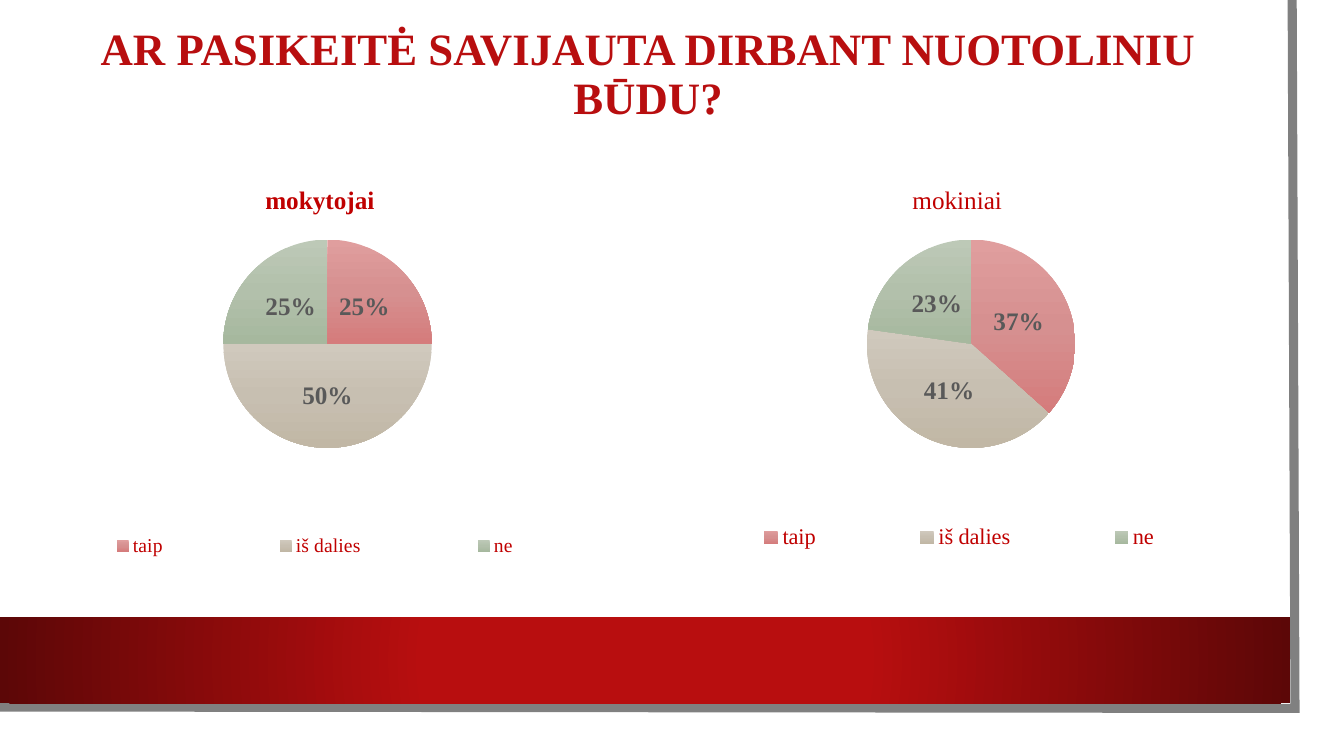
"""Build the slide comparing how teachers and pupils feel about remote work."""
from lxml import etree
from pptx import Presentation
from pptx.chart.data import CategoryChartData
from pptx.dml.color import RGBColor
from pptx.enum.chart import XL_CHART_TYPE, XL_LABEL_POSITION, XL_LEGEND_POSITION
from pptx.enum.shapes import MSO_SHAPE
from pptx.enum.text import MSO_ANCHOR, PP_ALIGN
from pptx.oxml.ns import qn
from pptx.util import Pt

PIE = XL_CHART_TYPE.PIE
LABEL_CENTER = XL_LABEL_POSITION.CENTER
LEGEND_BOTTOM = XL_LEGEND_POSITION.BOTTOM
RECTANGLE = MSO_SHAPE.RECTANGLE
MIDDLE = MSO_ANCHOR.MIDDLE
CENTER = PP_ALIGN.CENTER

SERIF = "Times New Roman"
RED = "B80E0F"
CHART_RED = "C00000"
ANSWERS = ["taip", "iš dalies", "ne"]
SLICE_COLORS = [
    ("E09E9E", "D69090", "D57C7C"),
    ("D0C9BD", "C7BFB1", "C1B7A5"),
    ("BDC9B7", "B2C0AB", "A6B89E"),
]


def color(code):
    """Turn a hex string into a colour."""
    return RGBColor.from_string(code)


def set_font(font, size, code, bold=False, name=SERIF):
    """Format a font."""
    font.name = name
    font.size = Pt(size)
    font.bold = bold
    font.color.rgb = color(code)


def add_text(frame, text, size, code, bold=False, align=CENTER, spacing=None):
    """Write one formatted paragraph into a text frame."""
    para = frame.paragraphs[0]
    para.alignment = align
    if spacing:
        para.line_spacing = spacing
    span = para.add_run()
    span.text = text
    set_font(span.font, size, code, bold)


def set_gradient(fill, properties, stops, radial=False):
    """Give shape properties a vertical or radial gradient."""
    fill.background()
    gradient = etree.Element(qn("a:gradFill"), rotWithShape="1")
    stop_list = etree.SubElement(gradient, qn("a:gsLst"))
    for position, code in stops:
        stop = etree.SubElement(stop_list, qn("a:gs"), pos=str(position * 1000))
        etree.SubElement(stop, qn("a:srgbClr"), val=code)
    if radial:
        shade = etree.SubElement(gradient, qn("a:path"), path="circle")
        etree.SubElement(shade, qn("a:fillToRect"), l="50000", t="50000", r="50000", b="50000")
    else:
        etree.SubElement(gradient, qn("a:lin"), ang="5400000", scaled="0")
    properties.replace(properties.find(qn("a:noFill")), gradient)


def set_layout(part, inner=False, **sizes):
    """Place a chart part by fractions of the chart area."""
    for old in part.findall(qn("c:layout")):
        part.remove(old)
    layout = etree.Element(qn("c:layout"))
    manual = etree.SubElement(layout, qn("c:manualLayout"))
    if inner:
        etree.SubElement(manual, qn("c:layoutTarget"), val="inner")
    for axis in ("x", "y"):
        etree.SubElement(manual, qn(f"c:{axis}Mode"), val="edge")
    for key, value in sizes.items():
        etree.SubElement(manual, qn(f"c:{key}"), val=str(value))
    overlay = part.find(qn("c:overlay"))
    part.insert(0 if overlay is None else part.index(overlay), layout)


def add_frame(page, left, top, width, height):
    """Draw the grey edge on the right and bottom and the red band above it."""
    right, bottom = left + width, top + height
    builder = page.shapes.build_freeform(right - 2, top, scale=Pt(1))
    builder.add_line_segments([(right, bottom), (left - 2, bottom - 1)], close=False)
    edge = builder.convert_to_shape()
    edge.shadow.inherit = False
    edge.fill.background()
    edge.line.width = Pt(6.5)
    edge.line.color.rgb = color("808080")
    outline = edge._element.spPr.find(qn("a:ln"))
    etree.SubElement(outline, qn("a:miter"), lim="800000")

    band = page.shapes.add_shape(
        RECTANGLE, Pt(left), Pt(bottom - 64.8), Pt(width - 3.6), Pt(61.2))
    band.shadow.inherit = False
    band.line.fill.background()
    set_gradient(band.fill, band._element.spPr, [(34, RED), (100, "5C0707")], radial=True)


def add_title(page, left, top, width, height):
    """Add the centred question at the top."""
    box = page.shapes.add_textbox(Pt(left), Pt(top), Pt(width), Pt(height))
    frame = box.text_frame
    frame.word_wrap = True
    frame.vertical_anchor = MIDDLE
    add_text(frame, "AR PASIKEITĖ SAVIJAUTA DIRBANT NUOTOLINIU BŪDU?", 32, RED,
             bold=True, spacing=0.9)


def add_pie(page, left, top, width, height, title, values,
            title_bold, legend_size, legend_top):
    """Add one pie of answers with its title and legend."""
    data = CategoryChartData()
    data.categories = ANSWERS
    data.add_series("Series 1", values)
    chart = page.shapes.add_chart(
        PIE, Pt(left), Pt(top), Pt(width), Pt(height), data).chart
    set_font(chart.font, 10, "000000", name="Arial Narrow")

    chart.has_title = True
    add_text(chart.chart_title.text_frame, title, 18, CHART_RED, title_bold)
    set_layout(chart.chart_title._element, x=0.41, y=0.03)

    chart.has_legend = True
    legend = chart.legend
    legend.position = LEGEND_BOTTOM
    legend.include_in_layout = True
    set_font(legend.font, legend_size, CHART_RED)
    set_layout(legend._element, x=0.01, y=legend_top, w=0.97, h=0.12)

    plot = chart.plots[0]
    plot.vary_by_categories = True
    set_layout(plot._element.getparent(), inner=True, x=0.03, y=0.17, w=0.97, h=0.49)
    plot.has_data_labels = True
    labels = plot.data_labels
    labels.show_percentage = True
    labels.show_value = False
    labels.number_format = "0%"
    labels.number_format_is_linked = False
    labels.position = LABEL_CENTER
    set_font(labels.font, 18, "595959", bold=True)

    series = plot.series[0]
    for index, codes in enumerate(SLICE_COLORS):
        style = series.points[index].format
        style.fill.background()
        style.line.fill.background()
        properties = series._element.findall(qn("c:dPt"))[index].find(qn("c:spPr"))
        set_gradient(style.fill, properties, zip((0, 50, 100), codes))


def main():
    """Build and save the deck."""
    deck = Presentation()
    deck.slide_width = Pt(960)
    deck.slide_height = Pt(540)
    page = deck.slides.add_slide(deck.slide_layouts[6])
    add_frame(page, 0, 0, 925.2, 505.8)
    add_title(page, 13, 14.8, 900, 78.5)
    add_pie(page, 0, 119.5, 454.3, 303.8, "mokytojai", (25, 50, 25),
            title_bold=True, legend_size=14, legend_top=0.83)
    add_pie(page, 472.3, 119.5, 429.8, 303.8, "mokiniai", (37, 41, 23),
            title_bold=False, legend_size=16, legend_top=0.81)
    deck.save("out.pptx")


if __name__ == "__main__":
    main()
